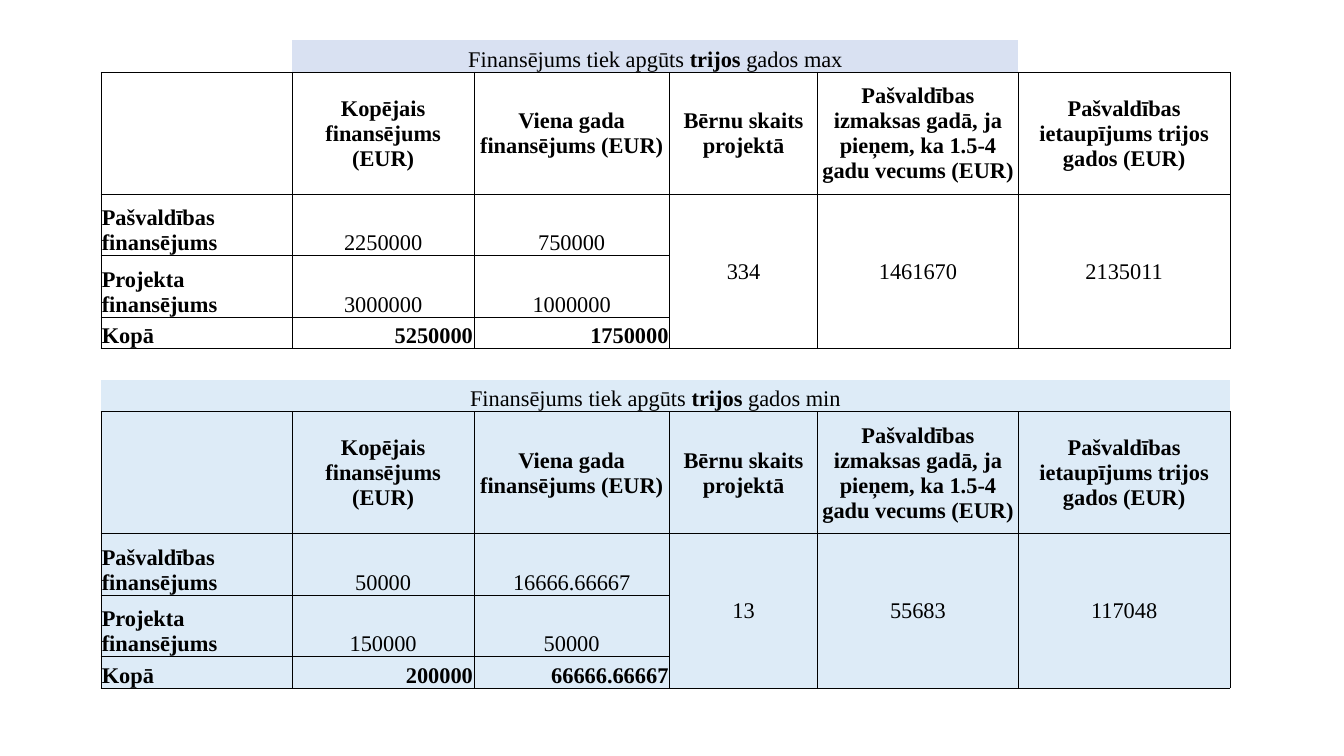
from lxml import etree
from pptx import Presentation
from pptx.dml.color import RGBColor
from pptx.enum.text import MSO_ANCHOR, PP_ALIGN
from pptx.oxml.ns import qn
from pptx.util import Inches, Pt

LEFT, CENTER, RIGHT = PP_ALIGN.LEFT, PP_ALIGN.CENTER, PP_ALIGN.RIGHT
MIDDLE, BOTTOM = MSO_ANCHOR.MIDDLE, MSO_ANCHOR.BOTTOM
FONT, SIZE = "Times New Roman", 16
BLACK, LILAC, BLUE = "000000", "D9E1F2", "DDEBF7"

WIDTHS = [1.9, 1.8, 1.94, 1.47, 1.99, 2.1]
BLOCK = [0.31, 1.21, 0.61, 0.61, 0.31]  # title, heads, three rows
GAP = len(BLOCK)
HEIGHTS = BLOCK + [0.31] + BLOCK

HEADS = [
    "Kopējais finansējums (EUR)",
    "Viena gada finansējums (EUR)",
    "Bērnu skaits projektā",
    "Pašvaldības izmaksas gadā, ja pieņem, ka 1.5-4 gadu vecums (EUR)",
    "Pašvaldības ietaupījums trijos gados (EUR)",
]
LABELS = ["Pašvaldības finansējums", "Projekta finansējums", "Kopā"]
MAX_SUMS = [("2250000", "750000"), ("3000000", "1000000"), ("5250000", "1750000")]
MIN_SUMS = [("50000", "16666.66667"), ("150000", "50000"), ("200000", "66666.66667")]
MAX_FACTS = ["334", "1461670", "2135011"]
MIN_FACTS = ["13", "55683", "117048"]


def color(code):
    return RGBColor.from_string(code)


def style(run, bold):
    run.font.name = FONT
    run.font.size = Pt(SIZE)
    run.font.bold = bold
    run.font.color.rgb = color(BLACK)


def border(cell, sides):
    """Draw thin black lines on the given sides and clear the others."""
    props = cell._tc.get_or_add_tcPr()
    for side in "LRTB":
        line = etree.SubElement(props, qn("a:ln" + side), w=str(Pt(0.5)))
        if side in sides:
            fill = etree.SubElement(line, qn("a:solidFill"))
            etree.SubElement(fill, qn("a:srgbClr"), val=BLACK)
        else:
            etree.SubElement(line, qn("a:noFill"))


def paint(cell, code):
    if code:
        cell.fill.solid()
        cell.fill.fore_color.rgb = color(code)
    else:
        cell.fill.background()


def write(cell, text, align=CENTER, anchor=MIDDLE, bold=False):
    cell.vertical_anchor = anchor
    para = cell.text_frame.paragraphs[0]
    para.text = text
    para.alignment = align
    for run in para.runs:
        style(run, bold)


def title(cell, word):
    write(cell, "Finansējums tiek apgūts ", anchor=BOTTOM)
    para = cell.text_frame.paragraphs[0]
    for text, bold in (("trijos", True), (f" gados {word}", False)):
        run = para.add_run()
        run.text = text
        style(run, bold)


def make_grid(slide):
    """Add the empty table with its sizes and borders."""
    frame = slide.shapes.add_table(
        len(HEIGHTS), len(WIDTHS), Inches(1), Inches(0.4),
        Inches(sum(WIDTHS)), Inches(sum(HEIGHTS)))
    grid = frame.table
    grid.first_row = grid.horz_banding = False
    for col, width in zip(grid.columns, WIDTHS):
        col.width = Inches(width)
    for i, height in enumerate(HEIGHTS):
        grid.rows[i].height = Inches(height)
        sides = {0: "B", GAP: "T", GAP + 1: "B"}.get(i, "LRTB")
        for cell in grid.rows[i].cells:
            cell.margin_left = cell.margin_right = cell.margin_top = Inches(0.01)
            cell.margin_bottom = 0
            border(cell, sides)
            paint(cell, None)
    return grid


def fill_block(grid, top, word, sums, facts):
    # Title and heads
    grid.cell(top, 1).merge(grid.cell(top, 4))
    title(grid.cell(top, 1), word)
    for col, head in enumerate(HEADS, 1):
        write(grid.cell(top + 1, col), head, bold=True)
    # Labels and sums, with a bold total
    for row, (label, pair) in enumerate(zip(LABELS, sums), top + 2):
        total = label == LABELS[-1]
        write(grid.cell(row, 0), label, LEFT, BOTTOM, True)
        for col, value in enumerate(pair, 1):
            write(grid.cell(row, col), value, RIGHT if total else CENTER, BOTTOM, total)
    # Facts shared by the three rows
    for col, fact in enumerate(facts, 3):
        grid.cell(top + 2, col).merge(grid.cell(top + 4, col))
        write(grid.cell(top + 2, col), fact)


def main():
    deck = Presentation()
    deck.slide_width, deck.slide_height = Inches(13.33), Inches(7.5)
    slide = deck.slides.add_slide(deck.slide_layouts[6])
    grid = make_grid(slide)

    # Upper block: only the title is tinted
    fill_block(grid, 0, "max", MAX_SUMS, MAX_FACTS)
    for col in range(1, 5):
        paint(grid.cell(0, col), LILAC)

    # Lower block: tinted throughout
    fill_block(grid, GAP + 1, "min", MIN_SUMS, MIN_FACTS)
    for row in range(GAP + 1, len(HEIGHTS)):
        for cell in grid.rows[row].cells:
            paint(cell, BLUE)

    deck.save("out.pptx")


if __name__ == "__main__":
    main()
